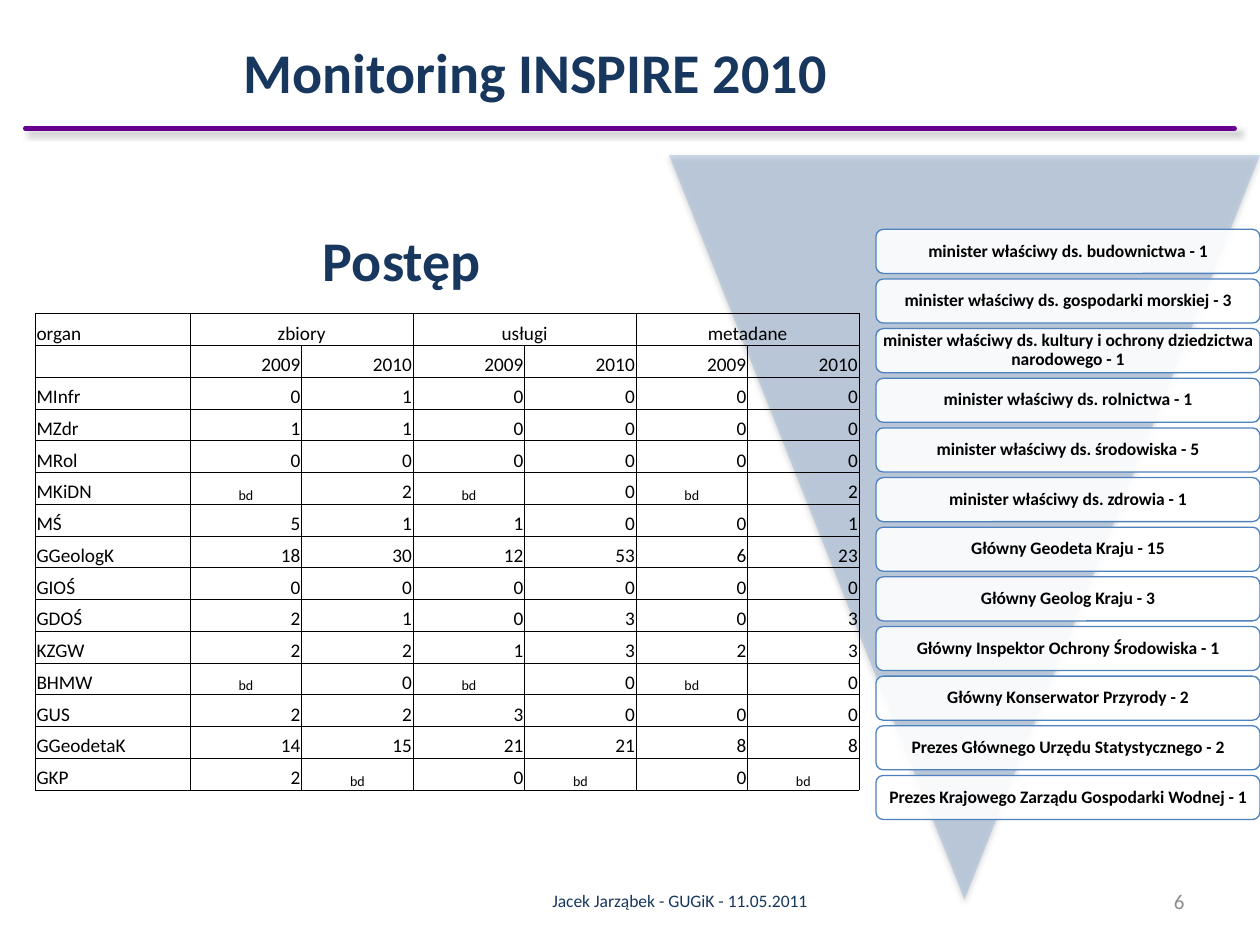
from lxml import etree
from pptx import Presentation
from pptx.dml.color import RGBColor
from pptx.enum import shapes, text
from pptx.oxml import parse_xml
from pptx.oxml.ns import nsdecls, qn
from pptx.util import Inches, Pt

NAVY = RGBColor(0x17, 0x37, 0x5E)
PURPLE = RGBColor(0x66, 0x00, 0x8F)
PALE_BLUE = RGBColor(0x95, 0xB3, 0xD7)
BLUE = RGBColor(0x4F, 0x81, 0xBD)
GRAY = RGBColor(0x8C, 0x8C, 0x8C)
BLACK = RGBColor(0x00, 0x00, 0x00)
WHITE = RGBColor(0xFF, 0xFF, 0xFF)

LEFT, CENTER, RIGHT = text.PP_ALIGN.LEFT, text.PP_ALIGN.CENTER, text.PP_ALIGN.RIGHT
NO_DATA = "bd"

HEADINGS = ["zbiory", "usługi", "metadane"]
ROWS = [
    ["", "2009", "2010", "2009", "2010", "2009", "2010"],
    ["MInfr", 0, 1, 0, 0, 0, 0],
    ["MZdr", 1, 1, 0, 0, 0, 0],
    ["MRol", 0, 0, 0, 0, 0, 0],
    ["MKiDN", NO_DATA, 2, NO_DATA, 0, NO_DATA, 2],
    ["MŚ", 5, 1, 1, 0, 0, 1],
    ["GGeologK", 18, 30, 12, 53, 6, 23],
    ["GIOŚ", 0, 0, 0, 0, 0, 0],
    ["GDOŚ", 2, 1, 0, 3, 0, 3],
    ["KZGW", 2, 2, 1, 3, 2, 3],
    ["BHMW", NO_DATA, 0, NO_DATA, 0, NO_DATA, 0],
    ["GUS", 2, 2, 3, 0, 0, 0],
    ["GGeodetaK", 14, 15, 21, 21, 8, 8],
    ["GKP", 2, NO_DATA, 0, NO_DATA, 0, NO_DATA],
]
AUTHORITIES = [
    "minister właściwy ds. budownictwa - 1",
    "minister właściwy ds. gospodarki morskiej - 3",
    "minister właściwy ds. kultury i ochrony dziedzictwa narodowego - 1",
    "minister właściwy ds. rolnictwa - 1",
    "minister właściwy ds. środowiska - 5",
    "minister właściwy ds. zdrowia - 1",
    "Główny Geodeta Kraju - 15",
    "Główny Geolog Kraju - 3",
    "Główny Inspektor Ochrony Środowiska - 1",
    "Główny Konserwator Przyrody - 2",
    "Prezes Głównego Urzędu Statystycznego - 2",
    "Prezes Krajowego Zarządu Gospodarki Wodnej - 1",
]


def write(frame, content, size, color, align, bold=False):
    frame.text = content
    paragraph = frame.paragraphs[0]
    paragraph.alignment = align
    font = paragraph.font if not content else paragraph.runs[0].font
    font.name, font.size, font.bold = "Calibri", Pt(size), bold
    font.color.rgb = color


def set_margins(target, left, top, right, bottom):
    target.margin_left, target.margin_right = Inches(left), Inches(right)
    target.margin_top, target.margin_bottom = Inches(top), Inches(bottom)


def add_text(slide, left, top, width, height, content, size, color, align=CENTER, bold=False):
    box = slide.shapes.add_textbox(Inches(left), Inches(top), Inches(width), Inches(height))
    box.text_frame.word_wrap = True
    box.text_frame.vertical_anchor = text.MSO_ANCHOR.MIDDLE
    write(box.text_frame, content, size, color, align, bold)


def set_opacity(shape, percent):
    color = shape.fill._xPr.find(qn("a:solidFill"))[0]
    etree.SubElement(color, qn("a:alpha"), val=str(percent * 1000))


def add_shadow(shape, opacity, blur, distance, angle):
    shape._element.spPr.append(parse_xml(
        f'<a:effectLst {nsdecls("a")}><a:outerShdw blurRad="{Pt(blur)}" dist="{Pt(distance)}" '
        f'dir="{angle * 60000}" rotWithShape="0"><a:srgbClr val="{BLACK}">'
        f'<a:alpha val="{opacity * 1000}"/></a:srgbClr></a:outerShdw></a:effectLst>'))


def add_header(slide, left, top, width):
    add_text(slide, left + 1.45, top, 5.2, 0.87, "Monitoring INSPIRE 2010", 32, NAVY, bold=True)
    y = Inches(top + 0.89)
    rule = slide.shapes.add_connector(
        shapes.MSO_CONNECTOR.STRAIGHT, Inches(left), y, Inches(left + width), y)
    rule.line.color.rgb = PURPLE
    rule.line.width = Pt(2.5)
    rule.line._ln.set("cap", "rnd")
    add_shadow(rule, 40, 4, 3, 45)


def add_authorities(slide, left, top, width, height):
    """Place the authority cards over a triangle that points down."""
    triangle = slide.shapes.add_shape(
        shapes.MSO_SHAPE.ISOSCELES_TRIANGLE,
        Inches(left), Inches(top), Inches(width), Inches(height))
    triangle.rotation = 180
    triangle.fill.solid()
    triangle.fill.fore_color.rgb = PALE_BLUE
    set_opacity(triangle, 45)
    triangle.line.fill.background()
    add_shadow(triangle, 35, 3.1, 1.8, 90)

    card_width = width * 0.65
    pitch = height / 15
    for index, authority in enumerate(AUTHORITIES):
        card = slide.shapes.add_shape(
            shapes.MSO_SHAPE.ROUNDED_RECTANGLE,
            Inches(left + width - card_width), Inches(top + 0.59 + index * pitch),
            Inches(card_width), Inches(0.35))
        card.shadow.inherit = False
        card.fill.solid()
        card.fill.fore_color.rgb = WHITE
        set_opacity(card, 90)
        card.line.color.rgb = BLUE
        card.line.width = Pt(0.75)
        frame = card.text_frame
        frame.word_wrap = True
        frame.vertical_anchor = text.MSO_ANCHOR.MIDDLE
        set_margins(frame, 0.04, 0.04, 0.04, 0.04)
        write(frame, authority, 10, BLACK, CENTER, bold=True)
        frame.paragraphs[0].line_spacing = 0.9


def fill_cell(cell, content, align):
    if content == NO_DATA:
        align = CENTER
    write(cell.text_frame, str(content), 8 if content == NO_DATA else 11, BLACK, align)
    cell.vertical_anchor = text.MSO_ANCHOR.BOTTOM
    set_margins(cell, 0.01, 0.01, 0.01, 0)
    properties = cell._tc.get_or_add_tcPr()
    for side in ("lnL", "lnR", "lnT", "lnB"):
        properties.append(parse_xml(
            f'<a:{side} {nsdecls("a")} w="{Pt(0.5)}"><a:solidFill>'
            f'<a:srgbClr val="{BLACK}"/></a:solidFill></a:{side}>'))
    cell.fill.background()


def add_progress(slide, left, top, width, height):
    add_text(slide, left + 0.31, top, 5.2, 0.87, "Postęp", 32, NAVY, bold=True)
    header = ["organ"]
    for heading in HEADINGS:
        header += [heading, ""]
    rows = [header] + ROWS
    table_height = height - 0.87
    graphic = slide.shapes.add_table(
        len(rows), len(header), Inches(left), Inches(top + 0.87),
        Inches(width), Inches(table_height))
    table = graphic.table
    table.first_row = table.horz_banding = False
    name_width = 1.23
    for index, column in enumerate(table.columns):
        column.width = Inches((width - name_width) / 6 if index else name_width)
    for row in table.rows:
        row.height = Inches(table_height / len(rows))
    for row_index, row in enumerate(rows):
        for column_index, content in enumerate(row):
            align = LEFT if column_index == 0 else CENTER if row_index == 0 else RIGHT
            fill_cell(table.cell(row_index, column_index), content, align)
    for column_index in (1, 3, 5):
        table.cell(0, column_index).merge(table.cell(0, column_index + 1))


def add_footer(slide, left, top, width, height):
    add_text(slide, left, top, 6.77, height, "Jacek Jarząbek - GUGiK - 11.05.2011", 10, NAVY)
    add_text(slide, left + width - 0.48, top, 0.48, height, "6", 12, GRAY, RIGHT)


def main():
    presentation = Presentation()
    presentation.slide_width, presentation.slide_height = Inches(10), Inches(7.5)
    slide = presentation.slides.add_slide(presentation.slide_layouts[6])
    add_header(slide, 0.2, 0.13, 9.6)
    add_authorities(slide, 5.31, 1.23, 4.69, 5.91)
    add_progress(slide, 0.28, 1.62, 6.54, 4.65)
    add_footer(slide, 2.01, 6.95, 7.49, 0.4)
    presentation.save("out.pptx")


if __name__ == "__main__":
    main()
